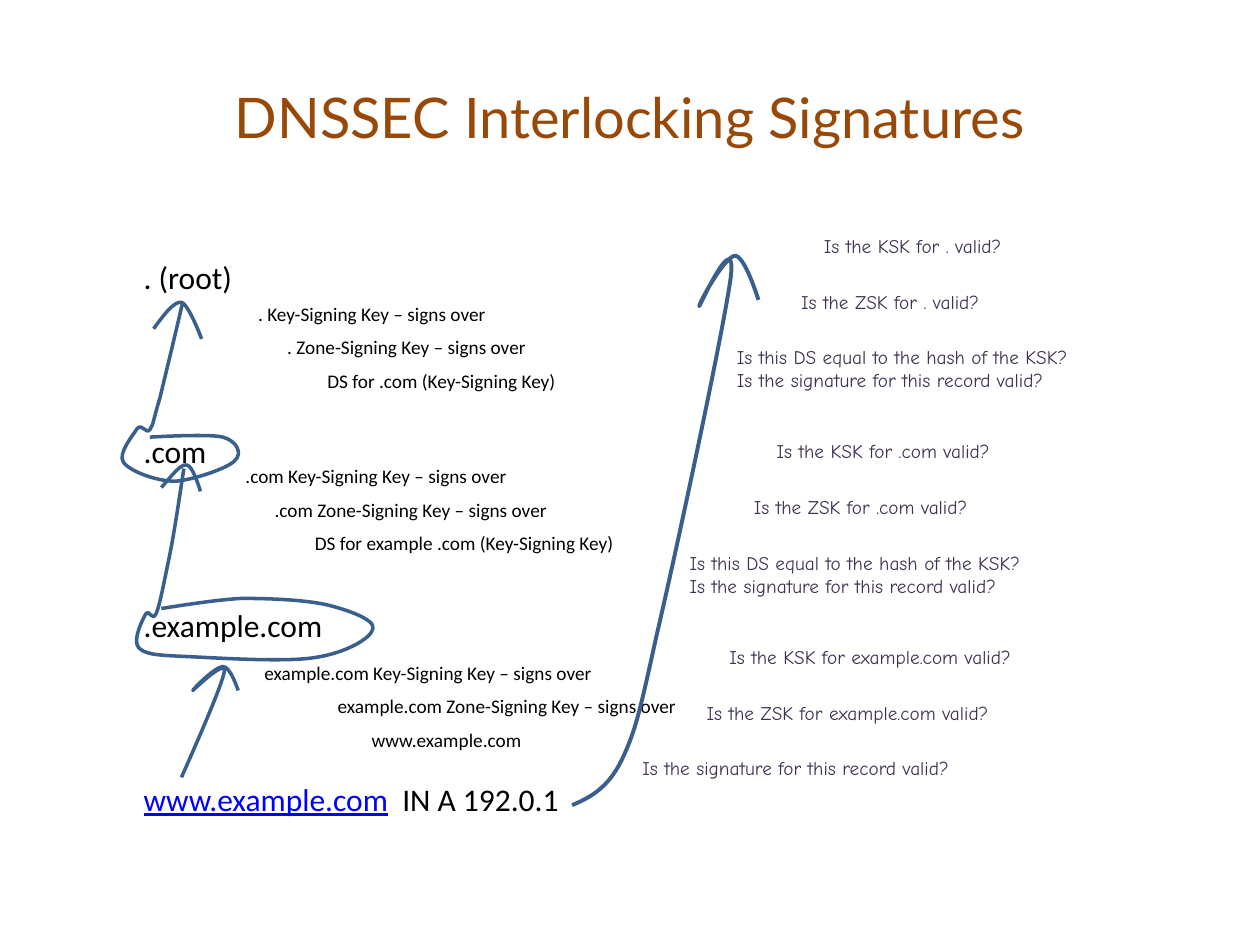
from typing import NamedTuple

from lxml import etree
from pptx import Presentation
from pptx.dml.color import RGBColor
from pptx.enum.text import MSO_ANCHOR, MSO_AUTO_SIZE, PP_ALIGN
from pptx.util import Pt

CENTER = PP_ALIGN.CENTER
MIDDLE = MSO_ANCHOR.MIDDLE
GROW = MSO_AUTO_SIZE.SHAPE_TO_FIT_TEXT

COLORS = {"title": "984807", "text": "000000", "link": "0000FF",
          "question": "403152", "ink": "3A5F8C"}


class Label(NamedTuple):
    text: str
    left: float
    width: float


class Question(NamedTuple):
    text: str
    width: float


class Stroke(NamedTuple):
    weight: float
    start: tuple
    curves: list  # two control points and an end point for each curve


# Zones, from the root down to the record
ZONE_LEFT, ZONE_TOP, ZONE_STEP = 75, 144, 99.4
ZONES = [
    Label(". (root)", ZONE_LEFT, 65.5),
    Label(".com", ZONE_LEFT, 50.4),
    Label(".example.com", ZONE_LEFT, 117.4),
    Label("www.example.com", ZONE_LEFT, 254.2),
]

# Signing steps of each zone, by top of the group
KEY_STEP = 19
KEYS = {
    169.2: [Label(". Key-Signing Key – signs over", 140.4, 146.2),
            Label(". Zone-Signing Key – signs over", 157, 151.9),
            Label("DS for .com (Key-Signing Key)", 180, 146.9)],
    262: [Label(".com Key-Signing Key – signs over", 133.2, 165.6),
          Label(".com Zone-Signing Key – signs over", 149.8, 171.4),
          Label("DS for example .com (Key-Signing Key)", 172.8, 187.9)],
    374.4: [Label("example.com Key-Signing Key – signs over", 144, 203.8),
            Label("example.com Zone-Signing Key – signs over", 185.8, 209.5),
            Label("www.example.com", 205.2, 101.5)],
}

# Questions step down and to the left
QUESTION_LEFT, QUESTION_TOP = 463.7, 130.3
GROUP_DX, GROUP_DY = -27, 117.4
QUESTION_DX, QUESTION_DY = (0, -13, -49.7), 31.8
VALID = "Is the signature for this record valid?"
DS_CHECK = Question("Is this DS equal to the hash of the KSK?\n" + VALID, 266.4)
QUESTIONS = [
    [Question("Is the KSK for . valid?", 153.4),
     Question("Is the ZSK for . valid?", 152.6), DS_CHECK],
    [Question("Is the KSK for .com valid?", 174.2),
     Question("Is the ZSK for .com valid?", 174.2), DS_CHECK],
    [Question("Is the KSK for example.com valid?", 219.6),
     Question("Is the ZSK for example.com valid?", 219.6),
     Question(VALID, 236.9)],
]

# Hand-drawn arrows and loops
STROKES = [
    # .com loop and the arrow shaft to the root
    Stroke(2, (104.4, 172.8), [
        (99.4, 194.4), (94.3, 215.3), (91.4, 227.5),
        (87.8, 239), (87.8, 242.6), (85.7, 245.5),
        (83.5, 248.4), (81.4, 241.9), (78.5, 244.8),
        (76.3, 248.4), (67, 259.2), (70.6, 264.2),
        (74.2, 269.3), (89.3, 275), (100.1, 275),
        (110.2, 274.3), (129.6, 267.8), (133.9, 263.5),
        (139, 259.2), (135.4, 252), (127.4, 249.8),
        (119.5, 247.7), (85.7, 249.8), (85.7, 249.8)]),
    # example.com loop and the arrow shaft to .com
    Stroke(2, (105.1, 267.8), [
        (102.2, 286.6), (99.4, 306), (96.5, 319.7),
        (93.6, 333.4), (91.4, 345.6), (89.3, 350.6),
        (87.1, 355.7), (85, 347.8), (83.5, 350.6),
        (81.4, 354.2), (75.6, 365.8), (79.2, 370.1),
        (82.8, 373.7), (87.8, 374.4), (104.4, 375.1),
        (121, 375.8), (162, 378.7), (180, 375.8),
        (198.7, 373), (212.4, 364.3), (213.1, 359.3),
        (214.6, 354.2), (198.7, 348.5), (186.5, 345.6),
        (173.5, 342.7), (153.4, 342), (138.2, 342),
        (122.4, 342.7), (92.2, 347.8), (92.2, 347.8)]),
    # Arrow from the record to example.com
    Stroke(2, (103.7, 444.2), [
        (115.2, 418.3), (126.7, 391.7), (128.2, 383.8),
        (129.6, 375.8), (110.2, 394.6), (110.2, 394.6),
        (110.2, 393.8), (123.1, 380.9), (127.4, 380.9),
        (131.8, 380.9), (136.1, 394.6), (136.1, 394.6)]),
    # Head of the arrow to .com
    Stroke(2, (92.2, 278.6), [
        (97.9, 272.2), (103, 265), (106.6, 265.7),
        (110.2, 265.7), (114.5, 280.8), (114.5, 280.8)]),
    # Head of the arrow to the root
    Stroke(2, (87.8, 187.9), [
        (93.6, 180), (99.4, 172.1), (103.7, 172.8),
        (108, 174.2), (115.2, 193.7), (115.2, 193.7)]),
    # Long arrow up the chain of questions
    Stroke(2.25, (326.9, 460.1), [
        (337, 455.8), (347, 450.7), (355, 434.9),
        (362.9, 418.3), (365, 409.7), (375.1, 363.6),
        (385.9, 317.5), (413.3, 190.1), (417.6, 158.4),
        (421.2, 127.4), (398.9, 177.1), (399.6, 175),
        (399.6, 172.8), (414, 146.9), (419.8, 146.2),
        (425.5, 145.4), (433.4, 171.4), (433.4, 171.4)]),
]


def add_run(p, text: str, *, size: float, font="Calibri", color="text", underline=False):
    r = p.add_run()
    r.text = text
    r.font.size, r.font.name, r.font.underline = Pt(size), font, underline
    r.font.color.rgb = RGBColor.from_string(COLORS[color])


def add_label(slide, text: str, left: float, top: float, width: float, **fmt):
    lines = text.split("\n")
    height = 7.2 + len(lines) * fmt["size"] * 1.22
    tf = slide.shapes.add_textbox(Pt(left), Pt(top), Pt(width), Pt(height)).text_frame
    tf.word_wrap, tf.auto_size = False, GROW
    for i, line in enumerate(lines):
        p = tf.add_paragraph() if i else tf.paragraphs[0]
        add_run(p, line, **fmt)
    return tf


def add_stroke(slide, stroke: Stroke):
    x, y = stroke.start
    builder = slide.shapes.build_freeform(Pt(x), Pt(y))
    builder.add_line_segments([(Pt(x), Pt(y)) for x, y in stroke.curves], close=False)
    sp = builder.convert_to_shape()
    sp.shadow.inherit = False
    sp.fill.background()
    sp.line.color.rgb = RGBColor.from_string(COLORS["ink"])
    sp.line.width = Pt(stroke.weight)
    # Merge each three line segments into one Bézier curve
    ns = "{http://schemas.openxmlformats.org/drawingml/2006/main}"
    segments = list(sp.element.iter(ns + "lnTo"))
    for i in range(0, len(segments), 3):
        curve = etree.SubElement(segments[i].getparent(), ns + "cubicBezTo")
        for segment in segments[i:i + 3]:
            curve.append(segment[0])
            segment.getparent().remove(segment)


def main():
    prs = Presentation()
    prs.slide_width, prs.slide_height = Pt(720), Pt(540)
    slide = prs.slides.add_slide(prs.slide_layouts[5])

    # Title
    title = slide.shapes.title
    title.left, title.top, title.width, title.height = Pt(36), Pt(21.6), Pt(648), Pt(90)
    tf = title.text_frame
    tf.vertical_anchor = MIDDLE
    tf.paragraphs[0].alignment = CENTER
    add_run(tf.paragraphs[0], "DNSSEC Interlocking Signatures",
            size=32, font="Lato", color="title")

    # Zones and the address record
    for i, zone in enumerate(ZONES):
        is_record = zone is ZONES[-1]
        tf = add_label(slide, zone.text, zone.left, ZONE_TOP + i * ZONE_STEP, zone.width,
                       size=18, color="link" if is_record else "text", underline=is_record)
    add_run(tf.paragraphs[0], "  IN A 192.0.1", size=18)

    # Signing steps
    for top, labels in KEYS.items():
        for i, key in enumerate(labels):
            add_label(slide, key.text, key.left, top + i * KEY_STEP, key.width, size=11)

    # Validation questions
    for g, group in enumerate(QUESTIONS):
        for i, question in enumerate(group):
            add_label(slide, question.text, QUESTION_LEFT + g * GROUP_DX + QUESTION_DX[i],
                      QUESTION_TOP + g * GROUP_DY + i * QUESTION_DY, question.width,
                      size=11, font="Comic Neue", color="question")

    # Arrows and loops
    for stroke in STROKES:
        add_stroke(slide, stroke)

    prs.save("out.pptx")


if __name__ == "__main__":
    main()
